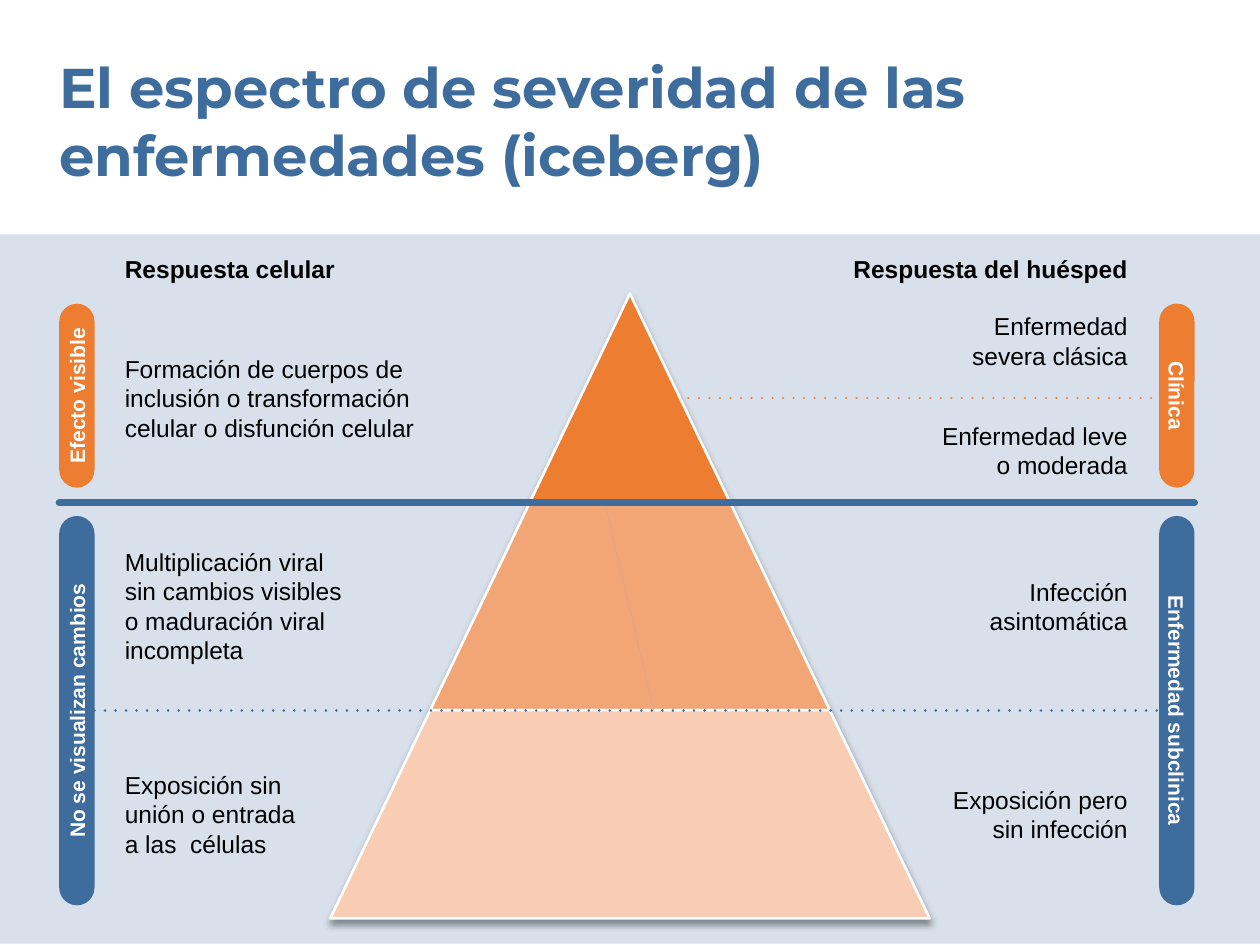
from lxml import etree
from pptx import Presentation
from pptx.dml.color import RGBColor
from pptx.enum.shapes import MSO_CONNECTOR, MSO_SHAPE
from pptx.enum.text import MSO_ANCHOR, PP_ALIGN
from pptx.oxml.ns import qn
from pptx.util import Inches, Pt

LEFT, CENTER, RIGHT = PP_ALIGN.LEFT, PP_ALIGN.CENTER, PP_ALIGN.RIGHT
MIDDLE = MSO_ANCHOR.MIDDLE
COLORS = {
    "blue": "3D6C9D", "orange": "ED7D31", "mid": "F2A676", "pale": "F8CDB4",
    "crease": "D9A588", "black": "000000", "white": "FFFFFF",
}

deck = Presentation()
deck.slide_width, deck.slide_height = Inches(10), Inches(7.5)
page = deck.slides.add_slide(deck.slide_layouts[6])
shapes = page.shapes


def write(shape, text, size, color, align, bold=False, font="Arial"):
    frame = shape.text_frame
    frame.margin_left = frame.margin_right = frame.margin_top = frame.margin_bottom = 0
    frame.word_wrap = True
    frame.text = text
    para = frame.paragraphs[0]
    para.alignment = align
    span = para.runs[0]
    span.font.name, span.font.size, span.font.bold = font, Pt(size), bold
    span.font.color.rgb = RGBColor.from_string(COLORS[color])


def draw_line(x1, y1, x2, y2, color, width, dotted=False):
    line = shapes.add_connector(MSO_CONNECTOR.STRAIGHT, Inches(x1), Inches(y1), Inches(x2), Inches(y2))
    line.line.color.rgb = RGBColor.from_string(COLORS[color])
    line.line.width = Pt(width)
    outline = line.line._get_or_add_ln()
    outline.set("cap", "rnd")
    if dotted:
        etree.SubElement(outline, qn("a:prstDash"), val="dot")
    etree.SubElement(line._element.spPr, qn("a:effectLst"))
    return line


# Background panel
panel = shapes.add_shape(MSO_SHAPE.RECTANGLE, 0, Inches(1.86), Inches(10), Inches(5.63))
panel.shadow.inherit = False
panel.fill.solid()
panel.fill.fore_color.rgb = RGBColor.from_string(COLORS["blue"])
panel.line.fill.background()
panel_color = panel._element.spPr.find(qn("a:solidFill"))[0]
etree.SubElement(panel_color, qn("a:alpha"), val="20000")

draw_line(5.38, 3.16, 9.2, 3.16, "orange", 1.5, dotted=True)

# Title and descriptions
title = shapes.add_textbox(Inches(0.47), Inches(0.42), Inches(8.55), Inches(1.08))
write(title, "El espectro de severidad de las enfermedades (iceberg)", 32, "blue", LEFT, True, "Montserrat")

LEFT_EDGE, RIGHT_EDGE = 0.99, 8.95
descriptions = [
    ("Respuesta celular", LEFT, 2.02, 2.82, 0.24, True),
    ("Formación de cuerpos de inclusión o transformación celular o disfunción celular",
     LEFT, 2.81, 2.82, 0.71, False),
    ("Multiplicación viral sin cambios visibles o maduración viral incompleta",
     LEFT, 4.34, 1.82, 0.94, False),
    ("Exposición sin unión o entrada a las  células", LEFT, 6.11, 1.48, 0.71, False),
    ("Respuesta del huésped", RIGHT, 2.02, 2.82, 0.24, True),
    ("Enfermedad severa clásica", RIGHT, 2.47, 1.58, 0.47, False),
    ("Enfermedad leve o moderada", RIGHT, 3.34, 1.58, 0.47, False),
    ("Infección asintomática", RIGHT, 4.58, 1.66, 0.47, False),
    ("Exposición pero sin infección", RIGHT, 6.23, 1.58, 0.47, False),
]
for text, align, top, width, height, bold in descriptions:
    left = LEFT_EDGE if align == LEFT else RIGHT_EDGE - width
    box = shapes.add_textbox(Inches(left), Inches(top), Inches(width), Inches(height))
    write(box, text, 14, "black", align, bold)

# Rotated side labels, placed by their centres
THICKNESS = 0.28
pills = {}
for text, center_x, center_y, length, color, rotation in [
    ("Efecto visible", 0.61, 3.14, 1.46, "orange", 270),
    ("No se visualizan cambios", 0.61, 5.64, 3.09, "blue", 270),
    ("Clínica", 9.34, 3.14, 1.46, "orange", 90),
    ("Enfermedad subclinica", 9.34, 5.64, 3.09, "blue", 90),
]:
    pill = shapes.add_shape(
        MSO_SHAPE.ROUNDED_RECTANGLE, Inches(center_x - length / 2),
        Inches(center_y - THICKNESS / 2), Inches(length), Inches(THICKNESS))
    pill.adjustments[0] = 0.5
    pill.rotation = rotation
    pill.shadow.inherit = False
    pill.fill.solid()
    pill.fill.fore_color.rgb = RGBColor.from_string(COLORS[color])
    pill.line.fill.background()
    pill.text_frame.vertical_anchor = MIDDLE
    write(pill, text, 12, "white", CENTER, True)
    pills[text] = pill

# Pyramid: three tiers of equal height, widening evenly from the apex
APEX_X, APEX_Y, TIER_HEIGHT, HALF_STEP = 5, 2.33, 1.653, 0.793
for tier, color in enumerate(["orange", "mid", "pale"]):
    top, bottom = APEX_Y + tier * TIER_HEIGHT, APEX_Y + (tier + 1) * TIER_HEIGHT
    upper, lower = tier * HALF_STEP, (tier + 1) * HALF_STEP
    corners = [(APEX_X + upper, top), (APEX_X + lower, bottom), (APEX_X - lower, bottom)]
    if tier:
        corners.append((APEX_X - upper, top))
    points = [(Inches(x), Inches(y)) for x, y in corners]
    builder = shapes.build_freeform(*points[0])
    builder.add_line_segments(points[1:], close=True)
    layer = builder.convert_to_shape()
    layer.fill.solid()
    layer.fill.fore_color.rgb = RGBColor.from_string(COLORS[color])
    layer.line.color.rgb = RGBColor.from_string(COLORS["white"])
    layer.line.width = Pt(1.5)
    layer.shadow.inherit = False
    effects = layer._element.spPr.find(qn("a:effectLst"))
    shadow = etree.SubElement(
        effects, qn("a:outerShdw"), blurRad=str(Pt(4)), dist=str(Pt(3)),
        dir="5400000", rotWithShape="0")
    shadow_color = etree.SubElement(shadow, qn("a:srgbClr"), val=COLORS["black"])
    etree.SubElement(shadow_color, qn("a:alpha"), val="40000")

draw_line(4.8, 3.99, 5.19, 5.64, "crease", 0.25)

# Dividers; the dotted one joins the inner sides of the two blue labels
divider = draw_line(0.75, 5.64, 9.2, 5.64, "blue", 1.5, dotted=True)
divider.begin_connect(pills["No se visualizan cambios"], 2)
divider.end_connect(pills["Enfermedad subclinica"], 2)
# Joining ignores the labels' rotation, so the ends are set again
divider.begin_x, divider.begin_y = Inches(0.75), Inches(5.64)
divider.end_x, divider.end_y = Inches(9.2), Inches(5.64)
draw_line(0.47, 3.99, 9.48, 3.99, "blue", 4)

deck.save("out.pptx")
